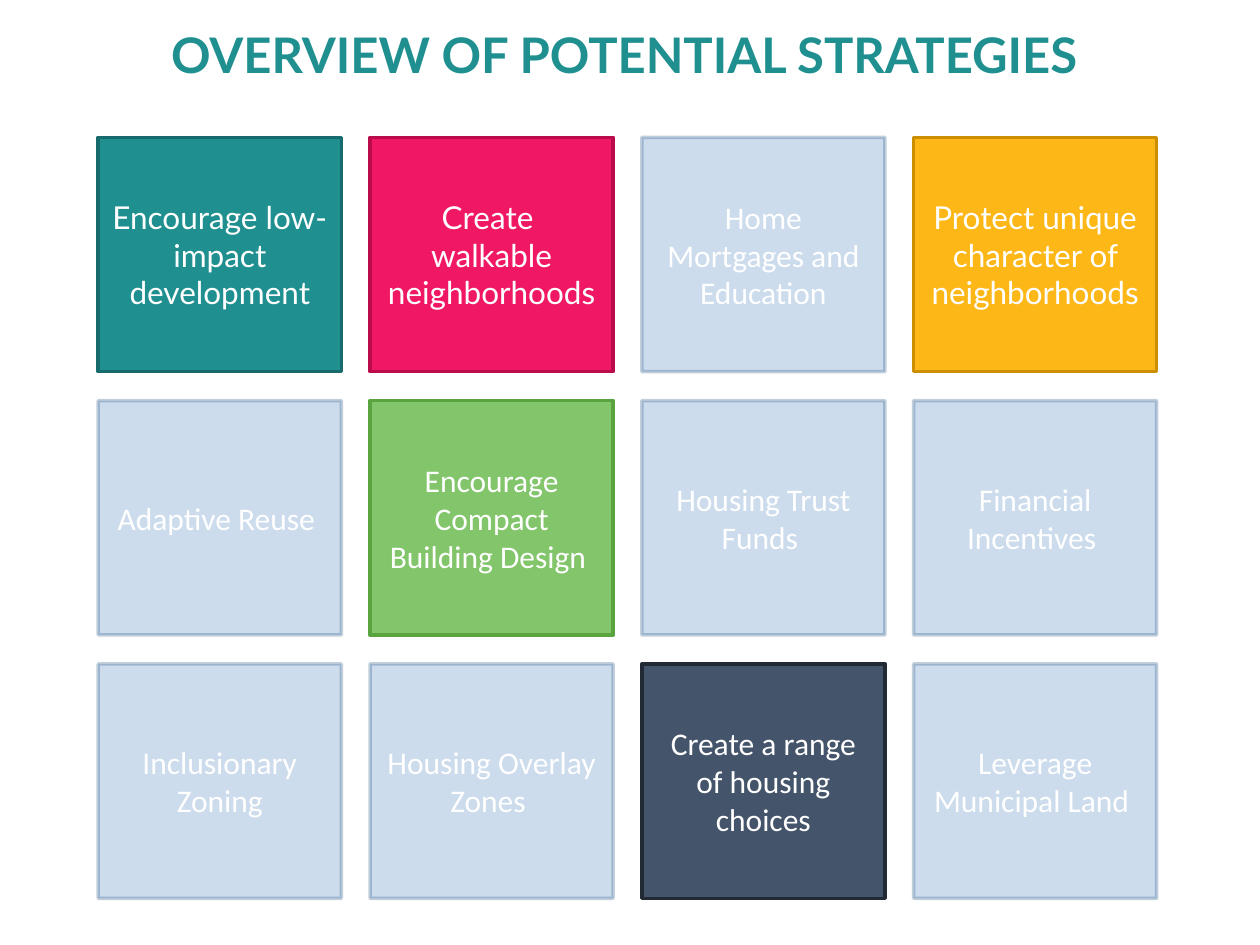
from lxml import etree
from pptx import Presentation
from pptx.dml.color import RGBColor
from pptx.enum import shapes, text
from pptx.oxml import ns
from pptx.util import Inches, Pt

COLORS = {
    "teal": "1F8F90", "teal_edge": "176B6C",
    "pink": "F01865", "pink_edge": "BA0C4A",
    "gold": "FDB717", "gold_edge": "CD8F02",
    "green": "82C56B", "green_edge": "5AA440",
    "slate": "44546A", "slate_edge": "222A35",
    "faded": "2C6EB0", "faded_edge": "215182",
    "white": "FFFFFF",
}
FADED_FILL, FADED_EDGE = 24, 28  # opacity in percent

# Card grid in inches
LEFT, TOP = 0.78, 1.09
CARD_W, CARD_H = 1.93, 1.86
COLUMN_STEP, ROW_STEP = 2.157, 2.09

# Rows of (paragraphs, color, font)
STRATEGIES = [
    [(["Encourage low-impact development"], "teal", "Lato"),
     (["Create ", "walkable neighborhoods"], "pink", "Lato"),
     (["Home Mortgages and Education"], "faded", "Calibri"),
     (["Protect unique character of neighborhoods"], "gold", "Lato")],
    [(["Adaptive Reuse "], "faded", "Calibri"),
     (["Encourage Compact Building Design "], "green", "Calibri"),
     (["Housing Trust Funds "], "faded", "Calibri"),
     (["Financial Incentives "], "faded", "Calibri")],
    [(["Inclusionary Zoning"], "faded", "Calibri"),
     (["Housing Overlay Zones "], "faded", "Calibri"),
     (["Create a range of housing choices"], "slate", "Calibri"),
     (["Leverage Municipal Land "], "faded", "Calibri")],
]


def rgb(name):
    return RGBColor.from_string(COLORS[name])


def add_run(paragraph, words, font, size, color, bold=False):
    paragraph.alignment = text.PP_ALIGN.CENTER
    run = paragraph.add_run()
    run.text = words
    run.font.name = font
    run.font.size = Pt(size)
    run.font.bold = bold
    run.font.color.rgb = rgb(color)


def set_opacity(fill_parent, percent):
    color = fill_parent.find(ns.qn("a:solidFill"))[0]
    etree.SubElement(color, ns.qn("a:alpha"), val=str(percent * 1000))


def add_title(slide, words, width):
    title = slide.shapes.title
    title.left, title.top = 0, 0
    title.width, title.height = width, Inches(0.92)
    frame = title.text_frame
    frame.auto_size = text.MSO_AUTO_SIZE.NONE
    frame.vertical_anchor = text.MSO_ANCHOR.MIDDLE
    heading = frame.paragraphs[0]
    heading.line_spacing = 0.9
    add_run(heading, words, "Lato", 28, "teal", bold=True)


def add_card(slide, column, row, paragraphs, color, font):
    card = slide.shapes.add_shape(
        shapes.MSO_SHAPE.RECTANGLE,
        Inches(LEFT + column * COLUMN_STEP), Inches(TOP + row * ROW_STEP),
        Inches(CARD_W), Inches(CARD_H))
    card.shadow.inherit = False
    card.fill.solid()
    card.fill.fore_color.rgb = rgb(color)
    card.line.color.rgb = rgb(color + "_edge")
    card.line.width = Pt(2)
    if color == "faded":
        properties = card.element.spPr
        set_opacity(properties, FADED_FILL)
        set_opacity(properties.find(ns.qn("a:ln")), FADED_EDGE)

    frame = card.text_frame
    frame.word_wrap = True
    frame.vertical_anchor = text.MSO_ANCHOR.MIDDLE
    for index, words in enumerate(paragraphs):
        paragraph = frame.add_paragraph() if index else frame.paragraphs[0]
        add_run(paragraph, words, font, 18, "white")


def main():
    deck = Presentation()
    deck.slide_width, deck.slide_height = Inches(10), Inches(7.5)
    slide = deck.slides.add_slide(deck.slide_layouts.get_by_name("Title Only"))

    # Heading
    add_title(slide, "OVERVIEW OF POTENTIAL STRATEGIES ", deck.slide_width)

    # Strategy cards
    for row, cards in enumerate(STRATEGIES):
        for column, (paragraphs, color, font) in enumerate(cards):
            add_card(slide, column, row, paragraphs, color, font)

    deck.save("out.pptx")


if __name__ == "__main__":
    main()
